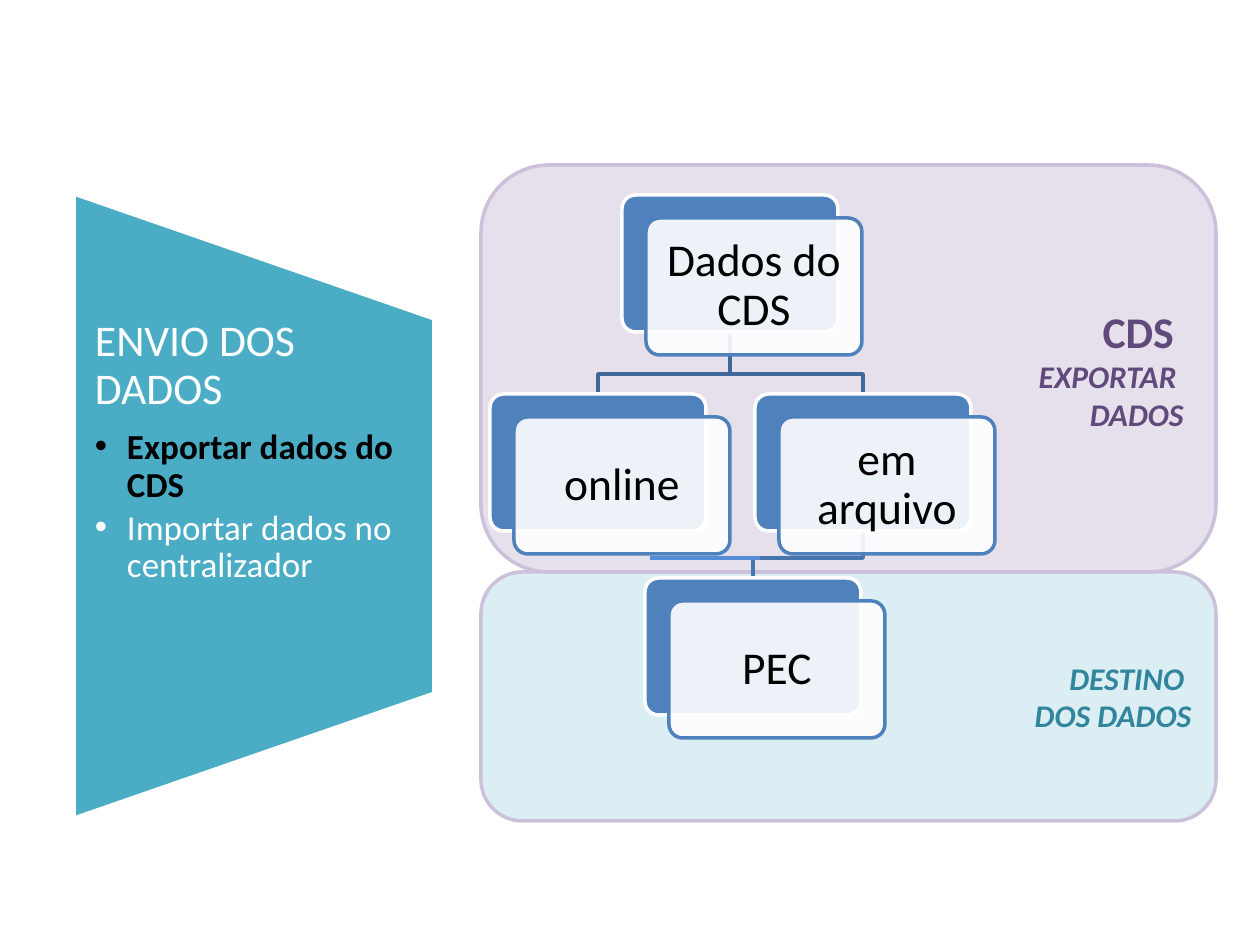
from dataclasses import dataclass

from lxml import etree
from pptx import Presentation
from pptx.dml.color import RGBColor
from pptx.enum.shapes import MSO_CONNECTOR, MSO_SHAPE
from pptx.enum.text import MSO_ANCHOR, MSO_AUTO_SIZE, PP_ALIGN
from pptx.oxml.ns import qn
from pptx.util import Pt

PX = 914400 / 126
FONT = "Calibri"
ROUND, TRAPEZOID = MSO_SHAPE.ROUNDED_RECTANGLE, MSO_SHAPE.FLOWCHART_MANUAL_OPERATION
STRAIGHT = MSO_CONNECTOR.STRAIGHT
TOP, MIDDLE = MSO_ANCHOR.TOP, MSO_ANCHOR.MIDDLE
LEFT, CENTER, RIGHT = PP_ALIGN.LEFT, PP_ALIGN.CENTER, PP_ALIGN.RIGHT
NO_AUTOFIT = MSO_AUTO_SIZE.NONE

WHITE = RGBColor(0xFF, 0xFF, 0xFF)
BLACK = RGBColor(0x00, 0x00, 0x00)
TEAL = RGBColor(0x4B, 0xAC, 0xC6)
DARK_TEAL = RGBColor(0x31, 0x85, 0x9C)
PALE_TEAL = RGBColor(0xDB, 0xEE, 0xF4)
PURPLE = RGBColor(0x60, 0x4A, 0x7B)
PALE_PURPLE = RGBColor(0xE6, 0xE0, 0xEC)
BAND_EDGE = RGBColor(0xCC, 0xC1, 0xDA)
BLUE = RGBColor(0x4F, 0x81, 0xBD)
LINK_DARK = RGBColor(0x3F, 0x67, 0x97)
LINK_MID = RGBColor(0x48, 0x75, 0xAC)
LINK_LIGHT = RGBColor(0x55, 0x8E, 0xD5)

CARD_W, CARD_H = 216, 137
SHIFT_X, SHIFT_Y = 24, 23


@dataclass(frozen=True)
class Line:
    text: str
    size: int
    color: RGBColor
    bold: bool = False
    italic: bool = False


@dataclass(frozen=True)
class Band:
    top: int
    height: int
    fill: RGBColor
    lines: tuple[Line, ...]


@dataclass(frozen=True)
class Card:
    text: str
    left: int
    top: int

    @property
    def center(self) -> int:
        return self.left + CARD_W // 2

    @property
    def bottom(self) -> int:
        return self.top + CARD_H


@dataclass(frozen=True)
class Link:
    """An elbow from the bottom of one card to the top of another."""
    source: Card
    target: Card
    color: RGBColor


BANDS = (
    Band(572, 249, PALE_TEAL, (
        Line("DESTINO ", 18, DARK_TEAL, True, True),
        Line("DOS DADOS", 18, DARK_TEAL, True, True))),
    Band(165, 407, PALE_PURPLE, (
        Line("CDS ", 25, PURPLE, True),
        Line("EXPORTAR ", 18, PURPLE, True, True),
        Line("DADOS", 18, PURPLE, True, True))),
)
ROOT = Card("Dados do CDS", 622, 195)
ONLINE = Card("online", 490, 394)
FILE = Card("em arquivo", 755, 394)
PEC = Card("PEC", 645, 578)
LINKS = (Link(FILE, PEC, LINK_MID), Link(ROOT, FILE, LINK_DARK), Link(ROOT, ONLINE, LINK_DARK))
TITLE = Line("ENVIO DOS DADOS", 25, WHITE)
STEPS = (
    Line("Exportar dados do CDS", 20, BLACK, True),
    Line("Importar dados no centralizador", 20, WHITE),
)


def px(n: float) -> int:
    return round(n * PX)


def add_box(s, kind, left: int, top: int, width: int, height: int,
            fill: RGBColor, edge: RGBColor):
    sp = s.shapes.add_shape(kind, px(left), px(top), px(width), px(height))
    sp.shadow.inherit = False
    sp.fill.solid()
    sp.fill.fore_color.rgb = fill
    sp.line.color.rgb = edge
    sp.line.width = Pt(2)
    return sp


def set_insets(tf, x: int, y: int) -> None:
    tf.margin_left = tf.margin_right = px(x)
    tf.margin_top = tf.margin_bottom = px(y)


def write(tf, lines: tuple[Line, ...], align, anchor, spacing: float = 1.0,
          after: int = 0, indent: int = 0) -> None:
    tf.word_wrap = True
    tf.auto_size = NO_AUTOFIT
    tf.vertical_anchor = anchor
    for i, line in enumerate(lines):
        p = tf.add_paragraph() if i else tf.paragraphs[0]
        p.text = line.text
        p.alignment = align
        p.line_spacing = spacing
        p.space_before = Pt(0)
        p.space_after = Pt(after)
        if indent:
            pPr = p._p.get_or_add_pPr()
            pPr.set("marL", str(px(indent)))
            pPr.set("indent", str(-px(indent)))
        font = p.font
        font.name, font.size, font.color.rgb = FONT, Pt(line.size), line.color
        font.bold, font.italic = line.bold, line.italic


def add_band(s, band: Band) -> None:
    sp = add_box(s, ROUND, 481, band.top, 735, band.height, band.fill, BAND_EDGE)
    write(sp.text_frame, band.lines, RIGHT, MIDDLE)


def place_placeholder(s, sp, top: int, height: int) -> None:
    """Move a placeholder onto the side panel, in front of what is drawn so far."""
    sp.left, sp.top, sp.width, sp.height = px(74), px(top), px(360), px(height)
    set_insets(sp.text_frame, 21, 0)
    s.shapes._spTree.append(sp._element)


def add_link(s, link: Link) -> None:
    x1, x2 = link.source.center, link.target.center
    y1, y2 = link.source.bottom, link.target.top
    builder = s.shapes.build_freeform(x1, y1, scale=PX)
    builder.add_line_segments([(x1, y2 - 20), (x2, y2 - 20), (x2, y2)], close=False)
    sp = builder.convert_to_shape()
    sp.shadow.inherit = False
    sp.fill.background()
    sp.line.color.rgb = link.color
    sp.line.width = Pt(2)


def add_card(s, card: Card) -> None:
    back = add_box(s, ROUND, card.left, card.top, CARD_W, CARD_H, BLUE, WHITE)
    front = add_box(s, ROUND, card.left + SHIFT_X, card.top + SHIFT_Y,
                    CARD_W, CARD_H, WHITE, BLUE)
    back.adjustments[0] = front.adjustments[0] = 0.1
    color = front._element.spPr.find(qn("a:solidFill"))[0]
    etree.SubElement(color, qn("a:alpha"), val="90000")
    set_insets(front.text_frame, 14, 14)
    write(front.text_frame, (Line(card.text, 26, BLACK),), CENTER, MIDDLE, 0.9)


def add_base_line(s) -> None:
    line = s.shapes.add_connector(STRAIGHT, px(650), px(558), px(760), px(558))
    line.line.color.rgb = LINK_LIGHT
    line.line.width = Pt(2.25)
    etree.SubElement(line._element.spPr, qn("a:effectLst"))


def main() -> None:
    prs = Presentation()
    prs.slide_width, prs.slide_height = px(1260), px(945)
    s = prs.slides.add_slide(prs.slide_layouts[1])
    title, body = s.placeholders

    for band in BANDS:
        add_band(s, band)

    panel = add_box(s, TRAPEZOID, -58, 326, 624, 360, TEAL, WHITE)
    panel.rotation = 270
    place_placeholder(s, title, 319, 100)
    write(title.text_frame, (TITLE,), LEFT, TOP, 0.9)
    place_placeholder(s, body, 429, 264)
    write(body.text_frame, STEPS, LEFT, TOP, 0.9, after=3, indent=32)

    for link in LINKS:
        add_link(s, link)
    for card in (ROOT, ONLINE, FILE, PEC):
        add_card(s, card)
    add_base_line(s)
    prs.save("out.pptx")


if __name__ == "__main__":
    main()
